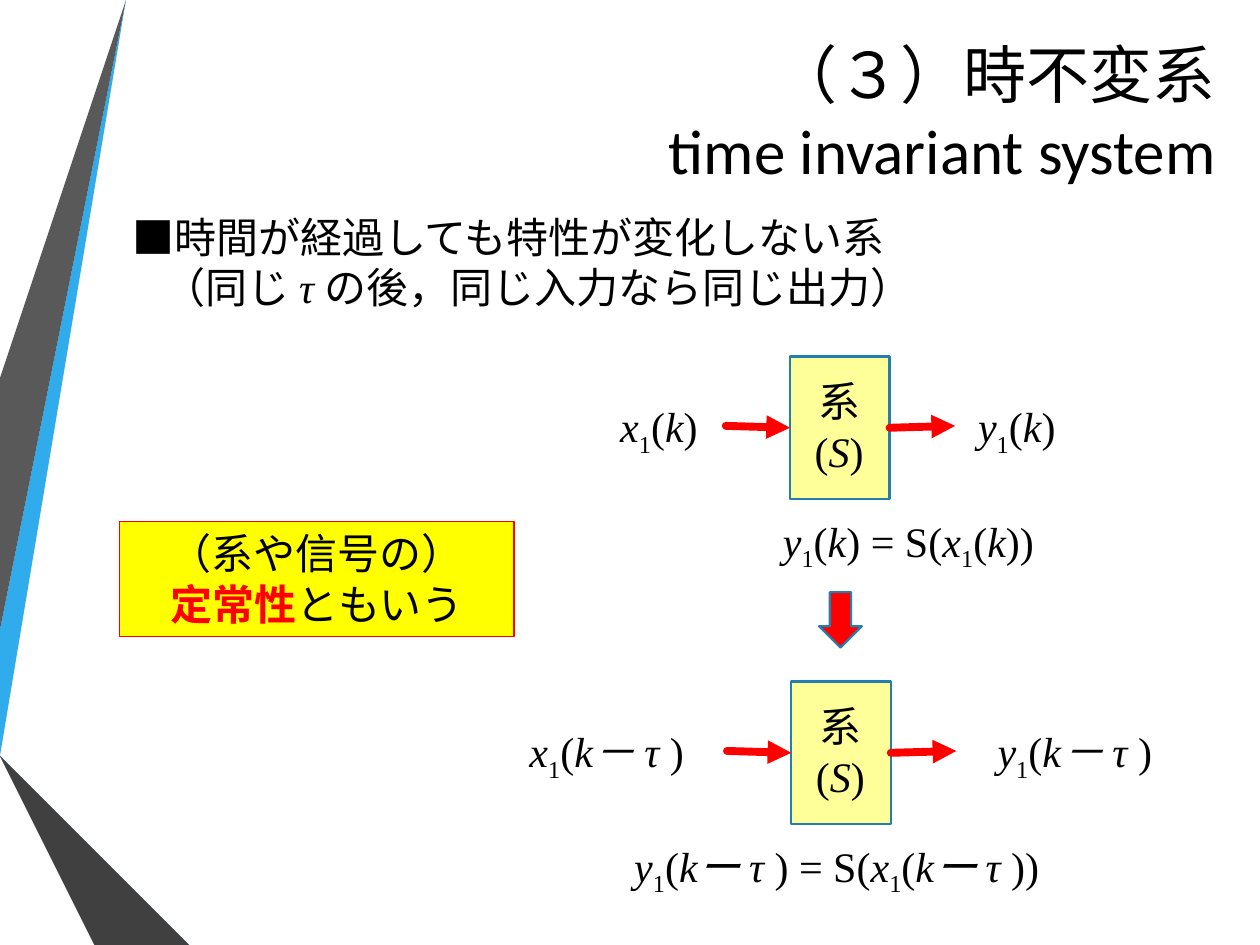
"""Build the slide that explains time invariant systems."""
from typing import NamedTuple

from lxml import etree
from pptx import Presentation
from pptx.dml.color import RGBColor
from pptx.enum.shapes import MSO_CONNECTOR, MSO_SHAPE
from pptx.enum.text import MSO_ANCHOR, MSO_AUTO_SIZE, PP_ALIGN
from pptx.oxml.ns import qn
from pptx.util import Inches, Pt

STRAIGHT = MSO_CONNECTOR.STRAIGHT
RECTANGLE, RIGHT_ARROW = MSO_SHAPE.RECTANGLE, MSO_SHAPE.RIGHT_ARROW
LEFT, CENTER, RIGHT = PP_ALIGN.LEFT, PP_ALIGN.CENTER, PP_ALIGN.RIGHT
TOP, MIDDLE = MSO_ANCHOR.TOP, MSO_ANCHOR.MIDDLE
NO_FIT, GROW = MSO_AUTO_SIZE.NONE, MSO_AUTO_SIZE.SHAPE_TO_FIT_TEXT

BLACK = RGBColor(0x00, 0x00, 0x00)
RED = RGBColor(0xFF, 0x00, 0x00)
YELLOW = RGBColor(0xFF, 0xFF, 0x00)
PALE_YELLOW = RGBColor(0xFF, 0xFF, 0x99)
OUTLINE_BLUE = RGBColor(0x24, 0x7F, 0xAF)
SKY_BLUE = RGBColor(0x30, 0xAC, 0xEC)
MID_BLUE = RGBColor(0x12, 0x87, 0xC3)
DEEP_BLUE = RGBColor(0x0C, 0x5A, 0x82)
LIGHT_GRAY = RGBColor(0x59, 0x59, 0x59)
MID_GRAY = RGBColor(0x40, 0x40, 0x40)
DARK_GRAY = RGBColor(0x26, 0x26, 0x26)

HANGING = 0.39
LINE_HEIGHT = 0.5
BLOCK_WIDTH, BLOCK_HEIGHT = 0.79, 1.13
ARROW_LENGTH = 0.51
FORMULA_RIGHT = 9.31


class Span(NamedTuple):
    text: str
    italic: bool = False
    subscript: bool = False
    strong: bool = False


class Ribbon(NamedTuple):
    color: RGBColor
    points: list


class Stage(NamedTuple):
    left: float
    top: float
    argument: str
    input_width: float
    output_width: float
    formula_width: float
    formula_argument: str


RIBBONS = [
    Ribbon(SKY_BLUE, [(0, 5.44), (0, 5.75), (0.22, 5.79), (1.17, 0), (0.89, 0)]),
    Ribbon(LIGHT_GRAY, [(0.83, 0), (0.55, 0), (0, 3.36), (0, 5.06)]),
    Ribbon(DARK_GRAY, [(0, 6.19), (0, 6.21), (0.93, 7.5), (0.99, 7.5)]),
    Ribbon(DEEP_BLUE, [(0, 5.79), (0, 5.8), (1.56, 7.5), (1.63, 7.5)]),
    Ribbon(MID_BLUE, [(0, 5.79), (1.63, 7.5), (2.33, 7.5), (0.22, 5.79), (0, 5.75)]),
    Ribbon(MID_GRAY, [(0, 6.19), (0.99, 7.5), (1.51, 7.5), (0, 5.86)]),
]
STAGES = [
    Stage(6.27, 2.83, "k", 1.06, 0.98, 4.2, "k"),
    Stage(6.28, 5.41, "k－ τ ", 1.91, 1.88, 5.34, "kー τ "),
]


def signal(name: str, argument: str, closing: str = ")") -> list[Span]:
    """Return the spans of a signal such as x1(k)."""
    return [Span(name, italic=True), Span("1", subscript=True), Span("("),
            Span(argument, italic=True), Span(closing)]


def write(shape, lines: list[list[Span]], align=CENTER) -> None:
    """Fill a shape with hanging paragraphs of formatted spans."""
    frame = shape.text_frame
    frame.word_wrap = True
    frame.auto_size = GROW
    frame.vertical_anchor = TOP
    for index, spans in enumerate(lines):
        para = frame.add_paragraph() if index else frame.paragraphs[0]
        para.alignment = align
        properties = para._p.get_or_add_pPr()
        properties.set("marL", str(Inches(HANGING)))
        properties.set("indent", str(-Inches(HANGING)))
        for span in spans:
            run = para.add_run()
            run.text = span.text
            font = run.font
            font.name, font.size = "Times New Roman", Pt(24)
            font.italic, font.bold = span.italic, span.strong
            font.color.rgb = RED if span.strong else BLACK
            if span.subscript:
                font._element.set("baseline", "-25000")


def add_text(page, left: float, top: float, width: float, height: float, lines, align=CENTER):
    """Add a text box."""
    box = page.shapes.add_textbox(Inches(left), Inches(top), Inches(width), Inches(height))
    write(box, lines, align)
    return box


def add_figure(page, kind, left: float, top: float, width: float, height: float,
               fill: RGBColor, line: RGBColor, weight: float):
    """Add a filled preset shape."""
    figure = page.shapes.add_shape(kind, Inches(left), Inches(top), Inches(width), Inches(height))
    figure.shadow.inherit = False
    figure.fill.solid()
    figure.fill.fore_color.rgb = fill
    figure.line.color.rgb = line
    figure.line.width = Pt(weight)
    return figure


def add_ribbon(page, ribbon: Ribbon) -> None:
    """Draw one ribbon of the edge decoration."""
    start, *others = ribbon.points
    builder = page.shapes.build_freeform(*start, scale=Inches(1))
    builder.add_line_segments(others, close=True)
    shape = builder.convert_to_shape()
    shape.shadow.inherit = False
    shape.fill.solid()
    shape.fill.fore_color.rgb = ribbon.color
    shape.line.fill.background()


def add_arrow(page, source, target) -> None:
    """Join the right side of one shape to the left side of another."""
    arrow = page.shapes.add_connector(STRAIGHT, 0, 0, 0, 0)
    arrow.begin_connect(source, 3)
    arrow.end_connect(target, 1)
    arrow.line.color.rgb = RED
    arrow.line.width = Pt(4.5)
    line = arrow.line._get_or_add_ln()
    line.set("cap", "rnd")
    etree.SubElement(line, qn("a:tailEnd"), type="triangle")
    etree.SubElement(arrow._element.spPr, qn("a:effectLst"))


def add_stage(page, stage: Stage) -> None:
    """Draw a system block with its input, output and formula."""
    label_top = stage.top + 0.3
    input_left = stage.left - ARROW_LENGTH - stage.input_width
    output_left = stage.left + BLOCK_WIDTH + ARROW_LENGTH + 0.01
    source = add_text(page, input_left, label_top, stage.input_width, LINE_HEIGHT,
                      [signal("x", stage.argument)])
    block = add_figure(page, RECTANGLE, stage.left, stage.top, BLOCK_WIDTH, BLOCK_HEIGHT,
                       PALE_YELLOW, OUTLINE_BLUE, 1.25)
    result = add_text(page, output_left, label_top, stage.output_width, LINE_HEIGHT,
                      [signal("y", stage.argument)])
    add_arrow(page, source, block)
    add_arrow(page, block, result)
    add_text(page, stage.left - 0.16, stage.top + 0.1, 1.1, 0.91,
             [[Span("系")], [Span("("), Span("S", italic=True), Span(")")]])
    formula = (signal("y", stage.formula_argument, ") = S(")
               + signal("x", stage.formula_argument, "))"))
    add_text(page, FORMULA_RIGHT - stage.formula_width, stage.top + 1.21,
             stage.formula_width, LINE_HEIGHT, [formula])


def add_title(page) -> None:
    """Place and format the title."""
    title = page.shapes.title
    title.left, title.top = Inches(1.32), Inches(0.21)
    title.width, title.height = Inches(8.43), Inches(1.35)
    frame = title.text_frame
    frame.text = "（３）時不変系\vtime invariant system"
    frame.auto_size = NO_FIT
    frame.vertical_anchor = MIDDLE
    para = frame.paragraphs[0]
    para.alignment = RIGHT
    para.font.size = Pt(36)
    for run in para.runs:
        run.font.name, run.font.size = "Calibri", Pt(36)
        run.font.color.rgb = BLACK


def main() -> None:
    """Build and save the deck."""
    deck = Presentation()
    deck.slide_width, deck.slide_height = Inches(10), Inches(7.5)
    page = deck.slides.add_slide(deck.slide_layouts[5])
    for ribbon in RIBBONS:
        add_ribbon(page, ribbon)
    add_title(page)
    summary = add_text(page, 0.95, 1.63, 8.79, 0.91, [
        [Span("■時間が経過しても特性が変化しない系")],
        [Span("（同じ "), Span("τ ", italic=True), Span("の後，同じ入力なら同じ出力）")],
    ], LEFT)
    summary.text_frame.paragraphs[1]._p.pPr.set("indent", str(-Inches(0.14)))
    for stage in STAGES:
        add_stage(page, stage)
    down_arrow = add_figure(page, RIGHT_ARROW, 6.45, 4.75, 0.44, 0.34, RED, OUTLINE_BLUE, 1.25)
    down_arrow.rotation = 90
    note = add_figure(page, RECTANGLE, 0.95, 4.14, 3.13, 0.91, YELLOW, RED, 0.75)
    write(note, [[Span("（系や信号の）")], [Span("定常性", strong=True), Span("ともいう")]])
    deck.save("out.pptx")


if __name__ == "__main__":
    main()
